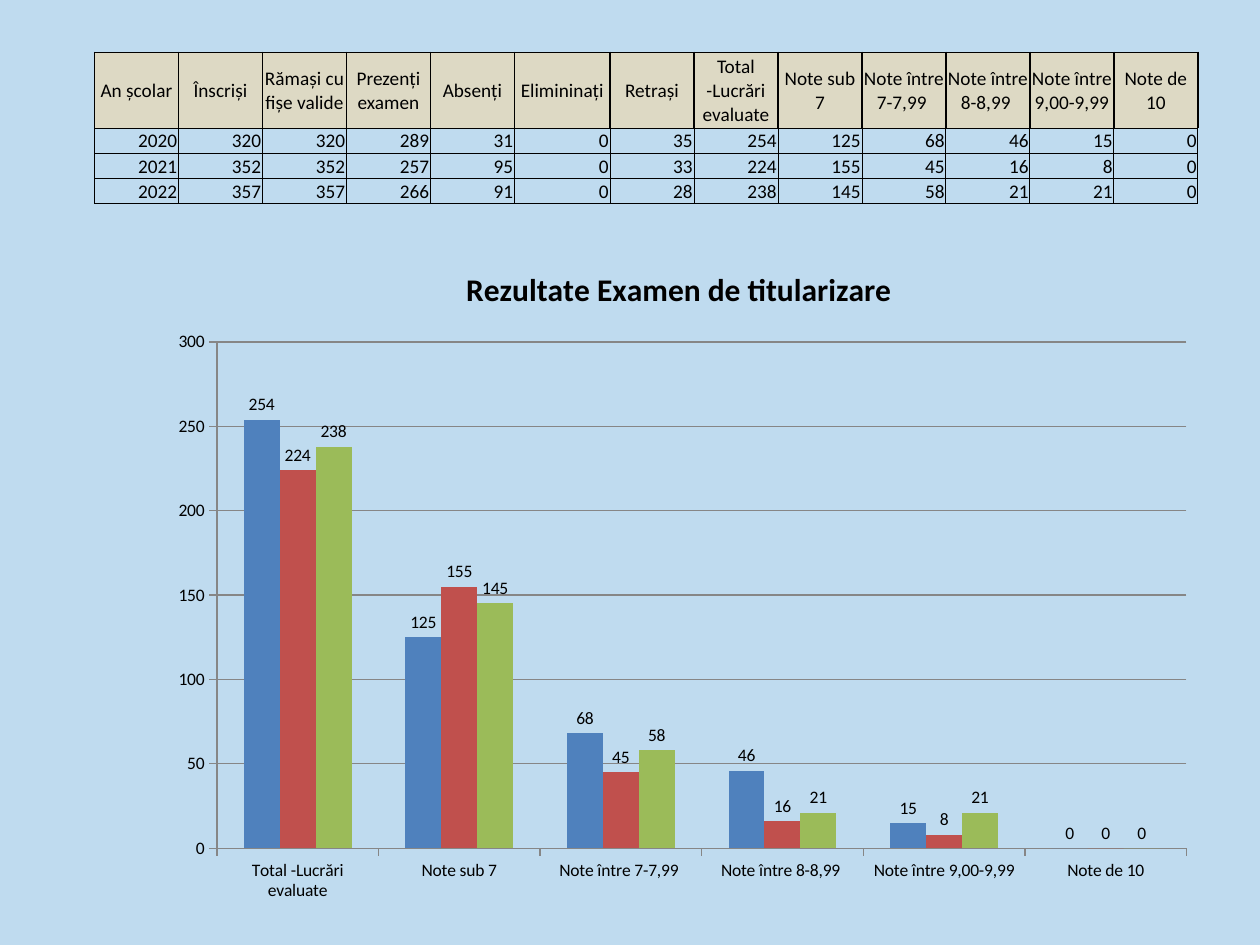
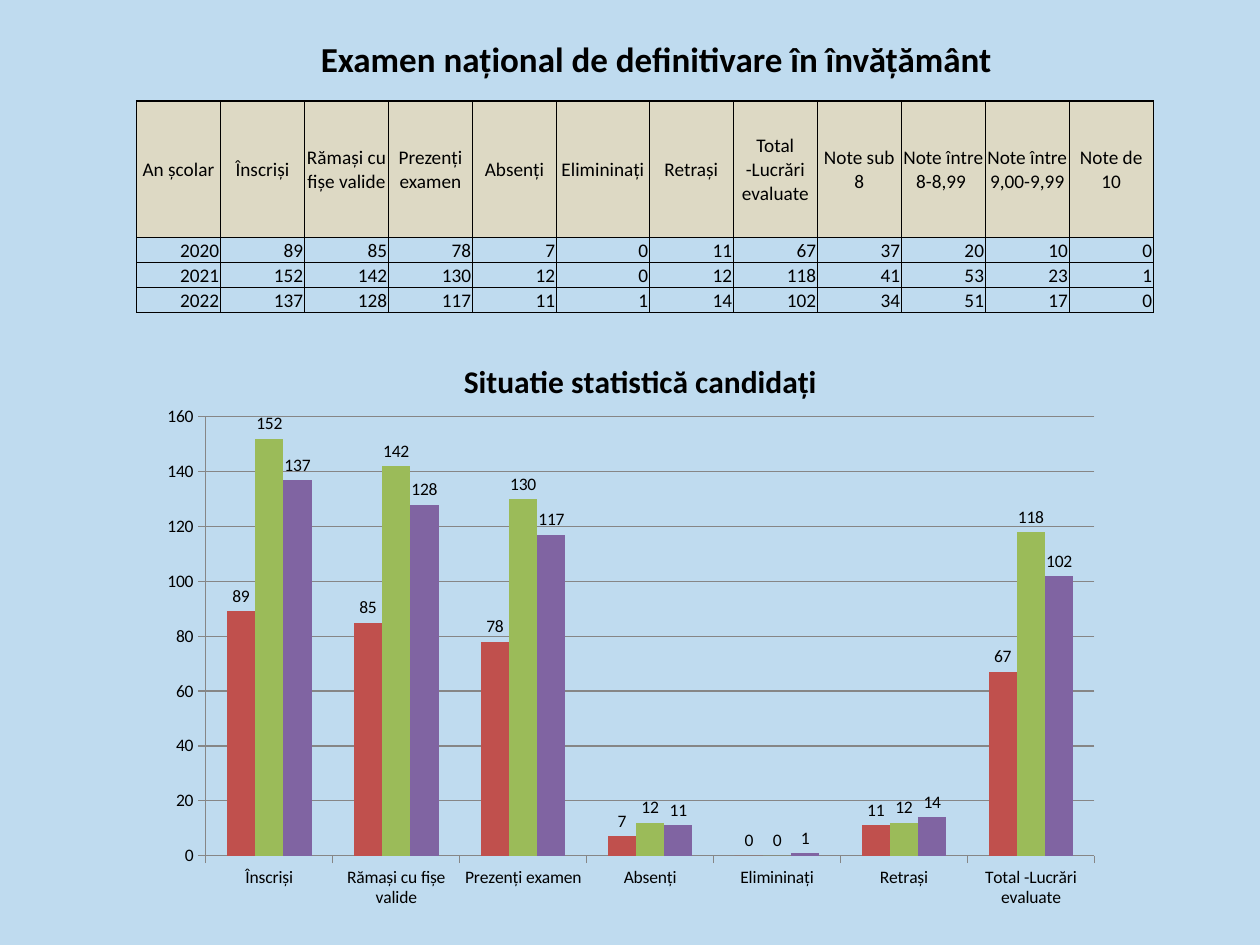
from dataclasses import dataclass
from typing import Optional

from lxml import etree
from pptx import Presentation
from pptx.chart.data import CategoryChartData
from pptx.dml.color import RGBColor
from pptx.enum.chart import XL_CHART_TYPE, XL_LABEL_POSITION, XL_TICK_MARK
from pptx.enum.text import MSO_ANCHOR, PP_ALIGN
from pptx.oxml.ns import qn
from pptx.util import Inches, Pt

COLUMN = XL_CHART_TYPE.COLUMN_CLUSTERED
ABOVE = XL_LABEL_POSITION.OUTSIDE_END
OUT, NONE = XL_TICK_MARK.OUTSIDE, XL_TICK_MARK.NONE
MIDDLE = MSO_ANCHOR.MIDDLE
CENTER, RIGHT = PP_ALIGN.CENTER, PP_ALIGN.RIGHT

WIDTH, HEIGHT = Inches(10), Inches(7.5)
COLS, ROWS = 120, 90
FONT = "Calibri"
INK, SKY, SAND, GRAY = "000000", "BFDBEF", "DDD9C4", "868686"
BLUE, RED, GREEN, PURPLE = "4F81BD", "C0504D", "9BBB59", "8064A2"
CELL, LINE = 8, 2.4
EDGES = ("a:lnL", "a:lnR", "a:lnT", "a:lnB")
START = ["An școlar", "Înscriși", "Rămași cu fișe valide", "Prezenți examen",
         "Absenți", "Elimininați", "Retrași", "Total -Lucrări evaluate"]
WIDE = START.index("Elimininați")


@dataclass
class Box:
    """A place in grid columns and rows."""
    left: float
    top: float
    width: float
    height: float

    def spots(self) -> tuple[int, int, int, int]:
        """Turn the grid place into slide lengths."""
        return (across(self.left), down(self.top),
                across(self.width), down(self.height))


@dataclass
class Grid:
    """A table of yearly results."""
    left: float
    top: float
    wide: float
    head: float
    names: list[str]
    years: list[list[int]]


@dataclass
class Graph:
    """A column chart of some table columns."""
    title: str
    box: Box
    span: slice
    hues: tuple[str, ...]
    plot: Optional[tuple[float, ...]] = None


@dataclass
class Page:
    """One exam with its table and chart."""
    grid: Grid
    graph: Graph
    title: str = ""


PAGES = [
    Page(
        Grid(9, 5, 9.1, 7.2,
             START + ["Note sub 7", "Note între 7-7,99 ", "Note între 8-8,99 ",
                      "Note între 9,00-9,99", "Note de 10"],
             [[2020, 320, 320, 289, 31, 0, 35, 254, 125, 68, 46, 15, 0],
              [2021, 352, 352, 257, 95, 0, 33, 224, 155, 45, 16, 8, 0],
              [2022, 357, 357, 266, 91, 0, 28, 238, 145, 58, 21, 21, 0]]),
        Graph("Rezultate Examen de titularizare ", Box(15, 23, 100, 64),
              slice(7, 13), (BLUE, RED, GREEN))),
    Page(
        Grid(13, 9.6, 8.85, 13,
             START + ["Note sub 8", "Note între 8-8,99 ",
                      "Note între 9,00-9,99", "Note de 10"],
             [[2020, 89, 85, 78, 7, 0, 11, 67, 37, 20, 10, 0],
              [2021, 152, 142, 130, 12, 0, 12, 118, 41, 53, 23, 1],
              [2022, 137, 128, 117, 11, 1, 14, 102, 34, 51, 17, 0]]),
        Graph("Situatie statistică candidați", Box(15, 32, 92, 55),
              slice(1, 8), (RED, GREEN, PURPLE), (0.05, 0.14, 0.92, 0.76)),
        "Examen național de definitivare în învățământ"),
]


def across(cols: float) -> int:
    """Measure grid columns."""
    return round(WIDTH * cols / COLS)


def down(rows: float) -> int:
    """Measure grid rows."""
    return round(HEIGHT * rows / ROWS)


def paint(fill, hue: str) -> None:
    """Fill with one solid colour."""
    fill.solid()
    fill.fore_color.rgb = RGBColor.from_string(hue)


def style(font, size: float, bold: bool = False) -> None:
    """Set the shared font at one size."""
    font.name, font.size, font.bold = FONT, Pt(size), bold
    font.color.rgb = RGBColor.from_string(INK)


def write(frame, text: str, size: float, align, bold: bool = False) -> None:
    """Write one aligned run."""
    para = frame.paragraphs[0]
    para.alignment = align
    run = para.add_run()
    run.text = text
    style(run.font, size, bold)


def border(cell, sizes: tuple[float, ...]) -> None:
    """Draw the left, right, top and bottom lines of a cell."""
    props = cell._tc.get_or_add_tcPr()
    for spot, (edge, size) in enumerate(zip(EDGES, sizes)):
        line = etree.Element(qn(edge), w=str(Pt(size)))
        solid = etree.SubElement(line, qn("a:solidFill"))
        etree.SubElement(solid, qn("a:srgbClr"), val=INK)
        props.insert(spot, line)


def put(cell, text: str, head: bool) -> None:
    """Fill and frame one table cell."""
    cell.vertical_anchor = MIDDLE
    cell.margin_left = cell.margin_right = cell.margin_top = Inches(0.01)
    cell.margin_bottom = 0
    write(cell.text_frame, text, 11, CENTER if head else RIGHT)
    if head:
        paint(cell.fill, SAND)
    else:
        cell.fill.background()
    border(cell, (1, 1, 1, 0.5) if head else (0.5,) * 4)


def tabulate(slide, grid: Grid) -> None:
    """Add the table of results."""
    lines = [grid.names, *grid.years]
    wides = [grid.wide if n == WIDE else CELL for n in range(len(grid.names))]
    highs = [grid.head] + [LINE] * len(grid.years)
    box = Box(grid.left, grid.top, sum(wides), sum(highs))
    table = slide.shapes.add_table(len(highs), len(wides), *box.spots()).table
    table.first_row = table.horz_banding = False
    for col, wide in zip(table.columns, wides):
        col.width = across(wide)
    for r, (line, high) in enumerate(zip(lines, highs)):
        table.rows[r].height = down(high)
        for c, value in enumerate(line):
            put(table.cell(r, c), str(value), r == 0)


def outline(line) -> None:
    """Draw a thin gray chart line."""
    line.width = Pt(0.75)
    paint(line.fill, GRAY)


def place(chart, plot: tuple[float, ...]) -> None:
    """Fix the inner plot area by shares of the chart."""
    area = chart.element.find(".//" + qn("c:plotArea"))
    for old in area.findall(qn("c:layout")):
        area.remove(old)
    layout = etree.Element(qn("c:layout"))
    manual = etree.SubElement(layout, qn("c:manualLayout"))
    keys = ("layoutTarget", "xMode", "yMode", "x", "y", "w", "h")
    for key, value in zip(keys, ("inner", "edge", "edge", *plot)):
        etree.SubElement(manual, qn("c:" + key), val=str(value))
    area.insert(0, layout)


def draw(slide, graph: Graph, grid: Grid) -> None:
    """Chart some table columns, one series a year."""
    data = CategoryChartData()
    data.categories = grid.names[graph.span]
    for n, year in enumerate(grid.years, 1):
        data.add_series(f"Series {n}", year[graph.span])
    chart = slide.shapes.add_chart(COLUMN, *graph.box.spots(), data).chart
    style(chart.font, 10)
    chart.has_legend = False
    chart.has_title = True
    write(chart.chart_title.text_frame, graph.title, 18, CENTER, True)
    for axis in (chart.category_axis, chart.value_axis):
        axis.major_tick_mark, axis.minor_tick_mark = OUT, NONE
        outline(axis.format.line)
    chart.value_axis.has_major_gridlines = True
    outline(chart.value_axis.major_gridlines.format.line)
    bars = chart.plots[0]
    bars.gap_width, bars.overlap = 150, 0
    bars.vary_by_categories = False
    for series, hue in zip(bars.series, graph.hues):
        paint(series.format.fill, hue)
        series.invert_if_negative = False
        labels = series.data_labels
        labels.show_value = True
        labels.position = ABOVE
        style(labels.font, 10)
    if graph.plot:
        place(chart, graph.plot)


def head(slide, text: str) -> None:
    """Add the slide title."""
    frame = slide.shapes.add_textbox(*Box(13, 3, 99, 5.3).spots()).text_frame
    frame.word_wrap = True
    write(frame, text, 20, CENTER, True)


def main() -> None:
    """Build both slides."""
    deck = Presentation()
    deck.slide_width, deck.slide_height = WIDTH, HEIGHT
    for page in PAGES:
        slide = deck.slides.add_slide(deck.slide_layouts[6])
        paint(slide.background.fill, SKY)
        draw(slide, page.graph, page.grid)
        tabulate(slide, page.grid)
        if page.title:
            head(slide, page.title)
    deck.save("out.pptx")


if __name__ == "__main__":
    main()
